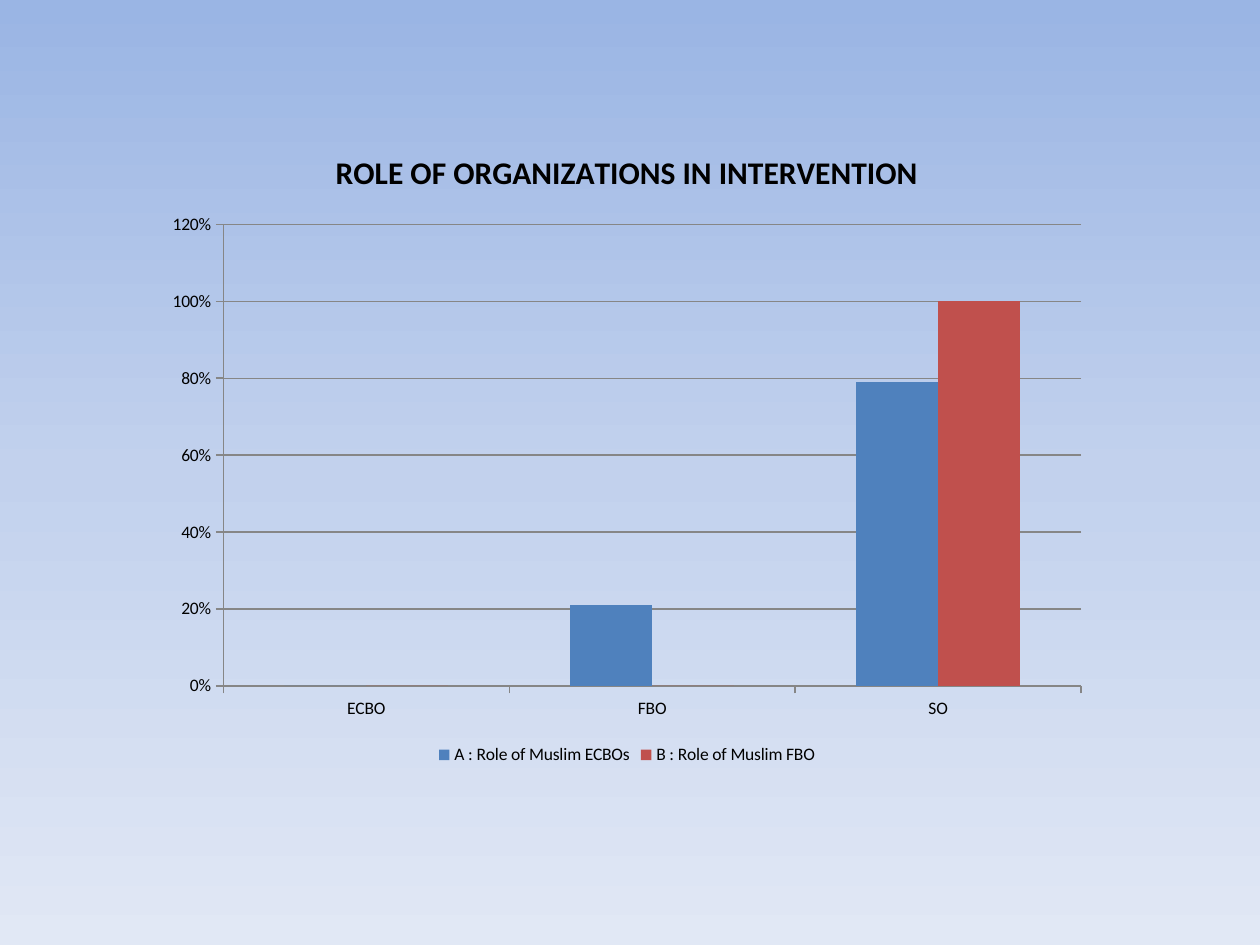
"""Build a slide with a clustered column chart on a gradient background."""
from copy import deepcopy

from pptx import Presentation, util as u
from pptx.chart import data as chart_data
from pptx.dml.color import RGBColor
from pptx.enum import chart as ch
from pptx.oxml import ns

TITLE = "ROLE OF ORGANIZATIONS IN INTERVENTION"
CATEGORIES = ["ECBO", "FBO", "SO"]
SERIES = [
    ("A : Role of Muslim ECBOs", (0, 0.21, 0.79), "blue"),
    ("B : Role of Muslim FBO", (0, 0, 1), "red"),
]
COLORS = {
    "blue": "4F81BD", "red": "C0504D", "text": "000000", "line": "868686",
    "top": "9AB5E4", "middle": "C2D1ED", "bottom": "E1E8F5",
}
GRADIENT = [(0, "top"), (0.5, "middle"), (1, "bottom")]
CHART_BOX = (1.22, 0.99, 7.51, 5.12)
BODY_FONT = {"name": "Calibri", "size": u.Pt(10), "bold": False}
TITLE_FONT = {"name": "Calibri", "size": u.Pt(18), "bold": True}
VALUE_AXIS = {"minimum_scale": 0, "maximum_scale": 1.2, "major_unit": 0.2,
              "has_major_gridlines": True}
TICKS = {"major_tick_mark": ch.XL_TICK_MARK.OUTSIDE,
         "minor_tick_mark": ch.XL_TICK_MARK.NONE}
LEGEND = {"position": ch.XL_LEGEND_POSITION.BOTTOM, "include_in_layout": False}
PLOT = {"gap_width": 150, "overlap": 0, "vary_by_categories": False}


def color(name):
    return RGBColor.from_string(COLORS[name])


def apply(target, values):
    for name, value in values.items():
        setattr(target, name, value)


def style_font(font, values):
    apply(font, values)
    font.color.rgb = color("text")


def style_line(line):
    line.color.rgb = color("line")
    line.width = u.Pt(0.75)


def paint_background(slide):
    fill = slide.background.fill
    fill.gradient()
    fill.gradient_angle = 270
    stops = slide.element.find(".//" + ns.qn("a:gsLst"))
    stops.insert(1, deepcopy(stops[0]))
    for stop, (position, name) in zip(fill.gradient_stops, GRADIENT):
        stop.position = position
        stop.color.rgb = color(name)


def add_column_chart(slide):
    data = chart_data.CategoryChartData(number_format="0%")
    data.categories = CATEGORIES
    for name, values, _ in SERIES:
        data.add_series(name, values)
    box = [u.Inches(length) for length in CHART_BOX]
    chart = slide.shapes.add_chart(
        ch.XL_CHART_TYPE.COLUMN_CLUSTERED, *box, data).chart
    style_font(chart.font, BODY_FONT)

    chart.has_title = True
    title = chart.chart_title.text_frame
    title.text = TITLE
    style_font(title.paragraphs[0].runs[0].font, TITLE_FONT)
    chart.chart_title.include_in_layout = False
    chart.has_legend = True
    apply(chart.legend, LEGEND)

    plot = chart.plots[0]
    apply(plot, PLOT)
    for series, (_, _, name) in zip(plot.series, SERIES):
        series.format.fill.solid()
        series.format.fill.fore_color.rgb = color(name)

    for axis in (chart.category_axis, chart.value_axis):
        apply(axis, TICKS)
        style_line(axis.format.line)
    apply(chart.value_axis, VALUE_AXIS)
    apply(chart.value_axis.tick_labels,
          {"number_format": "0%", "number_format_is_linked": False})
    style_line(chart.value_axis.major_gridlines.format.line)


def main():
    presentation = Presentation()
    apply(presentation, {"slide_width": u.Inches(10), "slide_height": u.Inches(7.5)})
    slide = presentation.slides.add_slide(presentation.slide_layouts[6])
    paint_background(slide)
    add_column_chart(slide)
    presentation.save("out.pptx")


if __name__ == "__main__":
    main()
